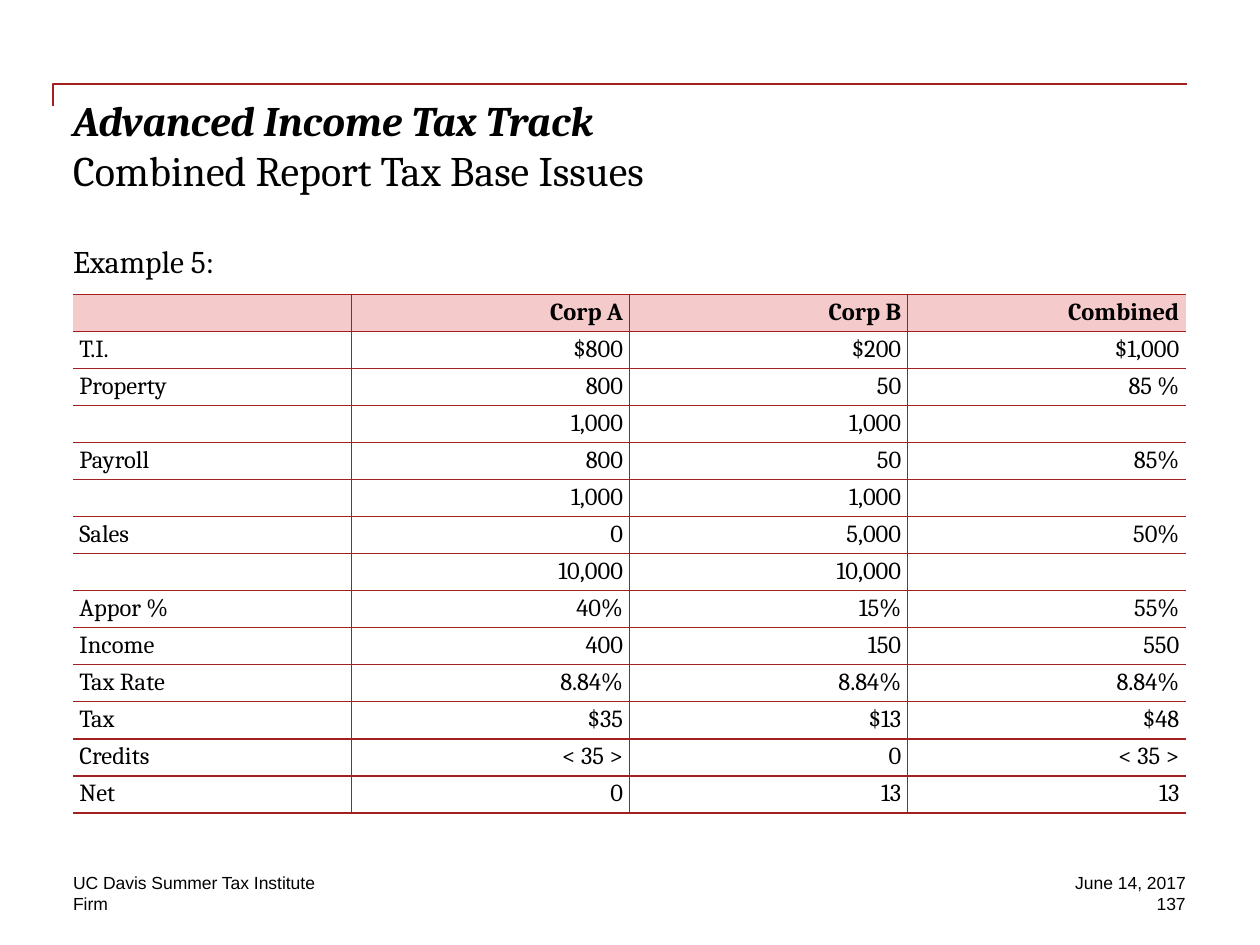
from lxml.etree import SubElement
from pptx import Presentation
from pptx.dml.color import RGBColor
from pptx.enum.shapes import MSO_CONNECTOR
from pptx.enum.text import MSO_ANCHOR, PP_ALIGN
from pptx.oxml.ns import qn
from pptx.util import Inches, Pt

RED = RGBColor(0xA3, 0x20, 0x20)
PINK = RGBColor(0xF5, 0xCA, 0xCA)
WHITE = RGBColor(0xFF, 0xFF, 0xFF)
BLACK = RGBColor(0, 0, 0)
SERIF, SANS = "Cambria", "Arial"

LEFT, WIDTH = 0.58, 8.83  # content column
LINE_H = 0.17             # footer line

ROWS = [
    ("", "Corp A", "Corp B", "Combined"),
    ("T.I.", "$800", "$200", "$1,000"),
    ("Property", "800", "50", "85 %"),
    ("", "1,000", "1,000", ""),
    ("Payroll", "800", "50", "85%"),
    ("", "1,000", "1,000", ""),
    ("Sales", "0", "5,000", "50%"),
    ("", "10,000", "10,000", ""),
    ("Appor %", "40%", "15%", "55%"),
    ("Income", "400", "150", "550"),
    ("Tax Rate", "8.84%", "8.84%", "8.84%"),
    ("Tax", "$35", "$13", "$48"),
    ("Credits", "< 35 >", "0", "< 35 >"),
    ("Net", "0", "13", "13"),
]


def style(p, size, face, align=PP_ALIGN.LEFT, bold=False):
    p.alignment = align
    p.font.size, p.font.name, p.font.bold = Pt(size), face, bold
    p.font.color.rgb = BLACK


def add_text(slide, box, text, size, face, align=PP_ALIGN.LEFT, anchor=MSO_ANCHOR.TOP):
    tf = slide.shapes.add_textbox(*map(Inches, box)).text_frame
    tf.word_wrap = True
    tf.vertical_anchor = anchor
    tf.margin_left = tf.margin_right = tf.margin_top = tf.margin_bottom = 0
    p = tf.paragraphs[0]
    p.text = text
    style(p, size, face, align)
    return p


def add_corner_rule(slide, x, y, w, h):
    """Line up the left side of the box, then along its top."""
    # A two-part elbow drawn upright, then turned a quarter about its centre
    cx, cy = x + w / 2, y + h / 2
    line = slide.shapes.add_connector(
        MSO_CONNECTOR.ELBOW, Inches(cx + h / 2), Inches(cy + w / 2),
        Inches(cx - h / 2), Inches(cy - w / 2))
    line.line.color.rgb = RED
    line.line.width = Pt(1)
    sp_pr = line._element.spPr
    sp_pr.find(qn("a:xfrm")).set("rot", "5400000")
    sp_pr.find(qn("a:prstGeom")).set("prst", "bentConnector2")
    SubElement(sp_pr, qn("a:effectLst"))


def add_title(slide, x, y, w, h):
    p = add_text(slide, (x, y, w, h), "", 24, SERIF)
    r = p.add_run()
    r.text = "Advanced Income Tax Track"
    r.font.bold = r.font.italic = True
    p.add_line_break()
    p.add_run().text = "Combined Report Tax Base Issues"


def set_borders(cell, open_sides):
    tc_pr = cell._tc.get_or_add_tcPr()
    for side in "LRTB":
        ln = SubElement(tc_pr, qn(f"a:ln{side}"), w=str(Pt(0.75)))
        if side in open_sides:
            SubElement(ln, qn("a:noFill"))
        else:
            fill = SubElement(ln, qn("a:solidFill"))
            SubElement(fill, qn("a:srgbClr"), val=str(RED))


def add_tax_table(slide, x, y, w, h):
    n_cols = len(ROWS[0])
    table = slide.shapes.add_table(
        len(ROWS), n_cols, *map(Inches, (x, y, w, h))).table
    table.first_row = table.horz_banding = False
    for i, values in enumerate(ROWS):
        table.rows[i].height = Inches(h / len(ROWS))
        for j, value in enumerate(values):
            cell = table.cell(i, j)
            cell.margin_left = cell.margin_right = Inches(0.05)
            cell.margin_top = cell.margin_bottom = Inches(0.03)
            set_borders(cell, {0: "L", n_cols - 1: "R"}.get(j, ""))
            cell.fill.solid()
            cell.fill.fore_color.rgb = PINK if i == 0 else WHITE
            p = cell.text_frame.paragraphs[0]
            p.text = value
            style(p, 14, SERIF, PP_ALIGN.RIGHT if j else PP_ALIGN.LEFT, i == 0)


def add_footer(slide, x, y, w):
    side_w = 1.67
    right = x + w - side_w
    add_text(slide, (x, y, 5.75, LINE_H), "UC Davis Summer Tax Institute",
             10, SANS, anchor=MSO_ANCHOR.BOTTOM)
    add_text(slide, (x, y + LINE_H, 2.83, LINE_H), "Firm", 10, SANS)
    for k, text in enumerate(("June 14, 2017", "137")):
        add_text(slide, (right, y + k * LINE_H, side_w, LINE_H), text,
                 10, SANS, PP_ALIGN.RIGHT)


def main():
    prs = Presentation()
    prs.slide_width, prs.slide_height = Inches(10), Inches(7.5)
    slide = prs.slides.add_slide(prs.slide_layouts[6])
    add_corner_rule(slide, 0.42, 0.67, 9, 0.17)
    add_title(slide, LEFT, 0.75, WIDTH, 1)
    add_text(slide, (LEFT, 1.92, WIDTH, 0.3), "Example 5:", 18, SERIF)
    add_tax_table(slide, LEFT, 2.34, WIDTH, 3.98)
    add_footer(slide, LEFT, 6.92, WIDTH)
    prs.save("out.pptx")


if __name__ == "__main__":
    main()
